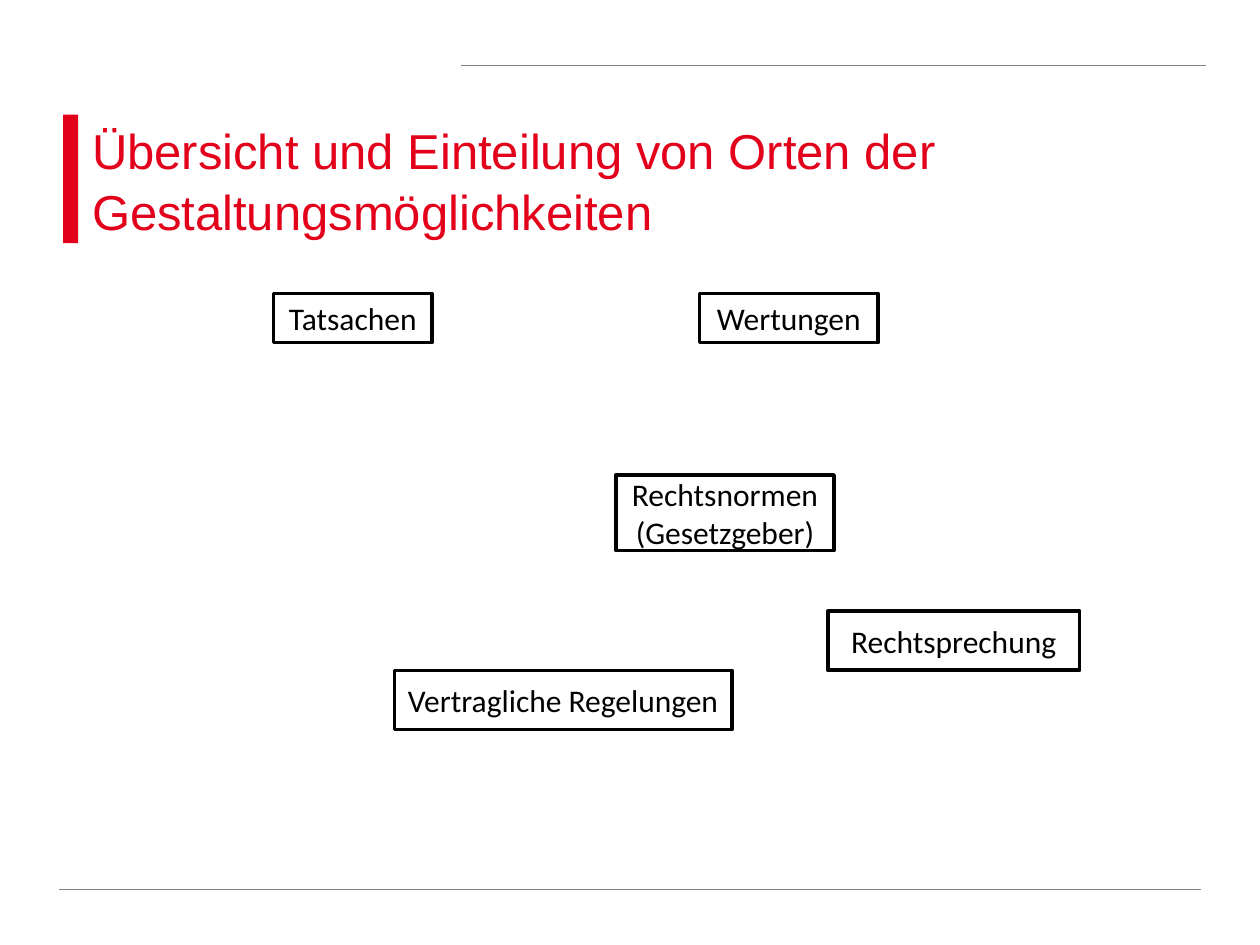
from dataclasses import dataclass

from lxml import etree
from pptx import Presentation
from pptx.dml.color import RGBColor
from pptx.enum.shapes import MSO_CONNECTOR, MSO_SHAPE
from pptx.enum.text import MSO_ANCHOR, MSO_AUTO_SIZE, PP_ALIGN
from pptx.oxml.ns import qn
from pptx.util import Inches, Pt

RECTANGLE = MSO_SHAPE.RECTANGLE
STRAIGHT = MSO_CONNECTOR.STRAIGHT
MIDDLE = MSO_ANCHOR.MIDDLE
LEFT, CENTER = PP_ALIGN.LEFT, PP_ALIGN.CENTER
NO_AUTOFIT = MSO_AUTO_SIZE.NONE

SLIDE_WIDTH, SLIDE_HEIGHT = Inches(10), Inches(7.5)
COLUMNS, ROWS = 100, 75
COLORS = {"accent": "E2001A", "ink": "000000", "rule": "808080"}
TITLE_TOP, TITLE_ROWS = 9.1, 10.2


@dataclass(frozen=True)
class Place:
    lines: tuple[str, ...]
    column: float
    row: float
    columns: float
    rows: float


@dataclass(frozen=True)
class Rule:
    start: float
    end: float
    row: float


PLACES = (
    Place(("Tatsachen",), 21.7, 23.3, 12.6, 3.9),
    Place(("Wertungen",), 55.5, 23.3, 14.2, 3.9),
    Place(("Rechtsnormen", "(Gesetzgeber)"), 48.9, 37.7, 17.3, 6),
    Place(("Rechtsprechung",), 65.7, 48.5, 20, 4.7),
    Place(("Vertragliche Regelungen",), 31.3, 53.2, 26.8, 4.7),
)
RULES = (Rule(36.6, 95.7, 5.2), Rule(4.7, 95.3, 70.6))


def across(columns: float) -> int:
    return round(SLIDE_WIDTH * columns / COLUMNS)


def down(rows: float) -> int:
    return round(SLIDE_HEIGHT * rows / ROWS)


def color(role: str) -> RGBColor:
    return RGBColor.from_string(COLORS[role])


def add_run(paragraph, text: str, font_name: str, size: float, role: str) -> None:
    run = paragraph.add_run()
    run.text = text
    run.font.name = font_name
    run.font.size = Pt(size)
    run.font.color.rgb = color(role)


def add_rectangle(slide, column: float, row: float, columns: float, rows: float):
    rectangle = slide.shapes.add_shape(
        RECTANGLE, across(column), down(row), across(columns), down(rows)
    )
    rectangle.shadow.inherit = False
    return rectangle


def draw_rule(slide, rule: Rule) -> None:
    line = slide.shapes.add_connector(
        STRAIGHT, across(rule.start), down(rule.row), across(rule.end), down(rule.row)
    )
    line.line.color.rgb = color("rule")
    line.line.width = Pt(0.25)
    etree.SubElement(line._element.spPr, qn("a:effectLst"))


def draw_title(slide, text: str) -> None:
    bar = add_rectangle(slide, 5, TITLE_TOP, 1.2, TITLE_ROWS)
    bar.fill.solid()
    bar.fill.fore_color.rgb = color("accent")
    bar.line.fill.background()

    title = slide.shapes.title
    title.left, title.top = across(6.9), down(TITLE_TOP)
    title.width, title.height = across(88.6), down(TITLE_ROWS)
    frame = title.text_frame
    frame.auto_size = NO_AUTOFIT
    frame.word_wrap = True
    frame.vertical_anchor = MIDDLE
    frame.margin_left = frame.margin_right = Inches(0.04)
    frame.margin_top = frame.margin_bottom = Inches(0.04)
    heading = frame.paragraphs[0]
    heading.alignment = LEFT
    heading.line_spacing = 1.05
    add_run(heading, text, "Arial", 28, "accent")


def draw_place(slide, place: Place) -> None:
    box = add_rectangle(slide, place.column, place.row, place.columns, place.rows)
    box.fill.background()
    box.line.color.rgb = color("ink")
    box.line.width = Pt(2)
    frame = box.text_frame
    frame.word_wrap = False
    frame.vertical_anchor = MIDDLE
    for index, text in enumerate(place.lines):
        paragraph = frame.add_paragraph() if index else frame.paragraphs[0]
        paragraph.alignment = CENTER
        add_run(paragraph, text, "Calibri", 18, "ink")


def main() -> None:
    presentation = Presentation()
    presentation.slide_width = SLIDE_WIDTH
    presentation.slide_height = SLIDE_HEIGHT
    slide = presentation.slides.add_slide(presentation.slide_layouts[5])
    for rule in RULES:
        draw_rule(slide, rule)
    draw_title(slide, "Übersicht und Einteilung von Orten der Gestaltungsmöglichkeiten")
    for place in PLACES:
        draw_place(slide, place)
    presentation.save("out.pptx")


if __name__ == "__main__":
    main()
